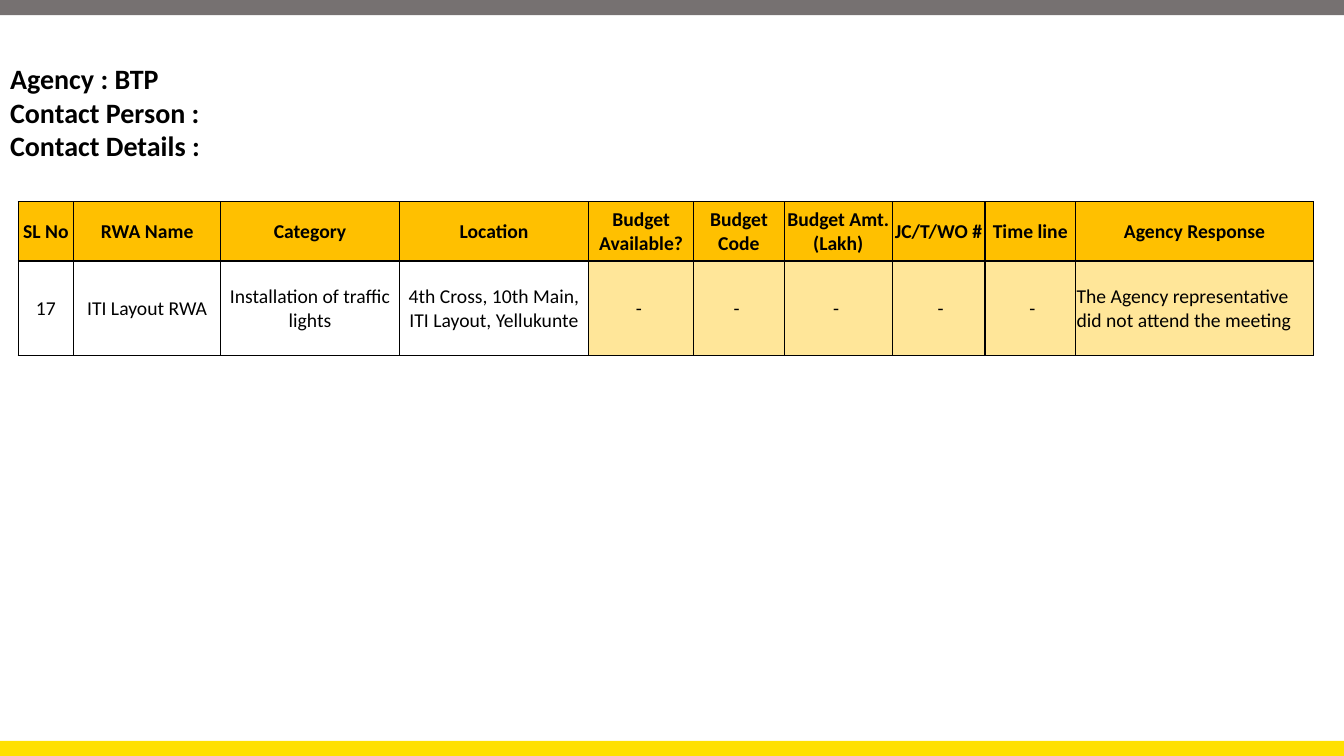
import pptx
import pptx.util
import pptx.dml.color
import pptx.enum.shapes
import pptx.enum.text
import pptx.oxml
import pptx.oxml.ns

Inches, Pt = pptx.util.Inches, pptx.util.Pt
RGB = pptx.dml.color.RGBColor
Align = pptx.enum.text.PP_ALIGN
Anchor = pptx.enum.text.MSO_ANCHOR

AGENCY = ["Agency : BTP", "Contact Person :", "Contact Details :"]
# heading, value, column width
COLUMNS = [
    ("SL No", "17", 0.55),
    ("RWA Name", "ITI Layout RWA", 1.46),
    ("Category", "Installation of traffic lights", 1.77),
    ("Location", "4th Cross, 10th Main, ITI Layout, Yellukunte", 1.88),
    ("Budget Available?", "- ", 1.04),
    ("Budget Code", "- ", 0.9),
    ("Budget Amt. (Lakh)", "- ", 1.07),
    ("JC/T/WO #", " -", 0.92),
    ("Time line", " -", 0.9),
    ("Agency Response", "The Agency representative did not attend the meeting", 2.36),
]
ROWS = [0.59, 0.94]
REPLY = 4  # first column that the agency fills in

WIDE, HIGH, BAR = 13.33, 7.5, 0.15
FONT = "Calibri"
BLACK = RGB(0x00, 0x00, 0x00)
GREY = RGB(0x76, 0x71, 0x71)
YELLOW = RGB(0xFF, 0xE0, 0x00)
AMBER = RGB(0xFF, 0xC0, 0x00)
CREAM = RGB(0xFF, 0xE6, 0x99)


def style(para, size, bold, align):
    para.alignment = align
    font = para.font
    font.name, font.size, font.bold = FONT, Pt(size), bold
    font.color.rgb = BLACK


def add_bar(slide, top, color):
    bar = slide.shapes.add_shape(
        pptx.enum.shapes.MSO_SHAPE.RECTANGLE,
        0, Inches(top), Inches(WIDE), Inches(BAR))
    bar.shadow.inherit = False
    bar.fill.solid()
    bar.fill.fore_color.rgb = color
    bar.line.fill.background()


def add_title(slide):
    title = slide.shapes.title
    title.left, title.top = 0, Inches(0.18)
    title.width, title.height = Inches(WIDE), Inches(1.48)
    frame = title.text_frame
    frame.text = "\n".join(AGENCY)
    frame.auto_size = pptx.enum.text.MSO_AUTO_SIZE.NONE
    frame.vertical_anchor = Anchor.BOTTOM
    for para in frame.paragraphs:
        style(para, 20, True, Align.LEFT)


def add_edges(cell):
    """Draw a 1 pt line on all four sides of the cell."""
    props = cell._tc.get_or_add_tcPr()
    for spot, side in enumerate(("lnL", "lnR", "lnT", "lnB")):
        props.insert(spot, pptx.oxml.parse_xml(
            f'<a:{side} {pptx.oxml.ns.nsdecls("a")} w="{Pt(1)}"><a:solidFill>'
            f'<a:srgbClr val="{BLACK}"/></a:solidFill></a:{side}>'))


def fill_cell(cell, text, color, bold, align):
    cell.text = text
    cell.vertical_anchor = Anchor.MIDDLE
    cell.margin_left = cell.margin_right = cell.margin_top = Inches(0.01)
    cell.margin_bottom = 0
    if color is None:
        cell.fill.background()
    else:
        cell.fill.solid()
        cell.fill.fore_color.rgb = color
    style(cell.text_frame.paragraphs[0], 14, bold, align)
    add_edges(cell)


def add_grid(slide):
    total = sum(width for _, _, width in COLUMNS)
    table = slide.shapes.add_table(
        len(ROWS), len(COLUMNS), Inches(0.18), Inches(2),
        Inches(total), Inches(sum(ROWS))).table
    for row, height in zip(table.rows, ROWS):
        row.height = Inches(height)
    last = len(COLUMNS) - 1
    for col, (head, value, width) in enumerate(COLUMNS):
        table.columns[col].width = Inches(width)
        fill_cell(table.cell(0, col), head, AMBER, True, Align.CENTER)
        fill_cell(table.cell(1, col), value, CREAM if col >= REPLY else None,
                  False, Align.LEFT if col == last else Align.CENTER)


def main():
    deck = pptx.Presentation()
    deck.slide_width, deck.slide_height = Inches(WIDE), Inches(HIGH)
    slide = deck.slides.add_slide(deck.slide_layouts.get_by_name("Title Only"))
    add_bar(slide, HIGH - BAR, YELLOW)
    add_bar(slide, 0, GREY)
    add_title(slide)
    add_grid(slide)
    deck.save("out.pptx")


if __name__ == "__main__":
    main()
